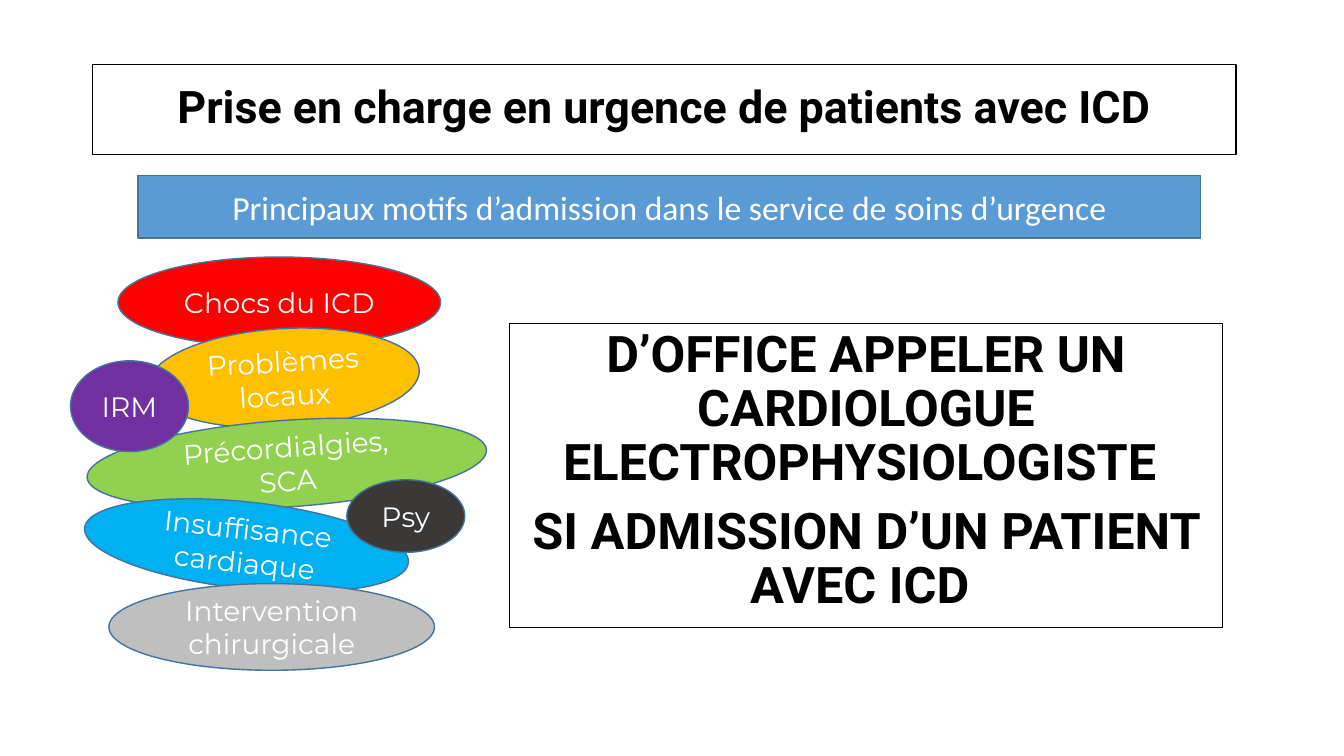
import pptx
import pptx.util
import pptx.dml.color
import pptx.enum.shapes
import pptx.enum.text

Inches = pptx.util.Inches
Pt = pptx.util.Pt
RGBColor = pptx.dml.color.RGBColor
Shape = pptx.enum.shapes.MSO_SHAPE
Anchor = pptx.enum.text.MSO_ANCHOR

BLACK = RGBColor(0x00, 0x00, 0x00)
WHITE = RGBColor(0xFF, 0xFF, 0xFF)
BLUE = RGBColor(0x5B, 0x9B, 0xD5)
EDGE = RGBColor(0x43, 0x73, 0x9E)
RED = RGBColor(0xFF, 0x00, 0x00)
AMBER = RGBColor(0xFF, 0xC0, 0x00)
GREEN = RGBColor(0x92, 0xD0, 0x50)
CYAN = RGBColor(0x00, 0xB0, 0xF0)
SILVER = RGBColor(0xBF, 0xBF, 0xBF)
PURPLE = RGBColor(0x70, 0x30, 0xA0)
DARK = RGBColor(0x3B, 0x38, 0x38)

# label, left, top, width, height, rotation, fill; from back to front
CAUSES = [
    ("Chocs du ICD", 1.17, 2.55, 3.2, 0.9, 0, RED),
    ("Problèmes locaux", 1.47, 3.26, 2.69, 0.98, -3.4, AMBER),
    ("Précordialgies, SCA", 0.86, 4.17, 3.97, 0.86, -4, GREEN),
    ("Insuffisance cardiaque", 0.83, 4.98, 3.23, 0.86, 6.2, CYAN),
    ("Intervention chirurgicale", 1.08, 5.79, 3.23, 0.86, 0, SILVER),
    ("IRM", 0.7, 3.58, 1.17, 0.9, 0, PURPLE),
    ("Psy", 3.44, 4.76, 1.17, 0.72, 0, DARK),
]


class Deck:
    head = "Roboto"
    body = "Calibri"
    label = "Montserrat"

    def __init__(self):
        self.prs = pptx.Presentation()
        self.prs.slide_width = Inches(13.33)
        self.prs.slide_height = Inches(7.5)
        self.slide = self.prs.slides.add_slide(self.prs.slide_layouts[5])

    def set_text(self, shape, lines, font, size, color, bold=False,
                 anchor=Anchor.MIDDLE, space=1.0, before=0):
        """Fill a shape with centred paragraphs in one style."""
        frame = shape.text_frame
        frame.text = "\n".join(lines)
        frame.word_wrap = True
        frame.auto_size = pptx.enum.text.MSO_AUTO_SIZE.NONE
        frame.vertical_anchor = anchor
        for para in frame.paragraphs:
            para.alignment = pptx.enum.text.PP_ALIGN.CENTER
            para.line_spacing = space
            para.space_before = Pt(before)
            for run in para.runs:
                run.font.name = font
                run.font.size = Pt(size)
                run.font.bold = bold
                run.font.color.rgb = color

    def border(self, shape, color, width):
        shape.line.color.rgb = color
        shape.line.width = Pt(width)

    def title(self, text, left, top, width, height):
        shape = self.slide.shapes.title
        shape.left, shape.top = Inches(left), Inches(top)
        shape.width, shape.height = Inches(width), Inches(height)
        self.border(shape, BLACK, 1)
        self.set_text(shape, [text], self.head, 32, BLACK, bold=True,
                      space=0.9)

    def notice(self, lines, left, top, width, height):
        box = self.slide.shapes.add_textbox(
            Inches(left), Inches(top), Inches(width), Inches(height))
        self.border(box, BLACK, 0.75)
        self.set_text(box, lines, self.head, 36, BLACK, bold=True,
                      anchor=Anchor.TOP, space=0.9, before=10)

    def panel(self, kind, text, left, top, width, height, fill, font, size):
        shape = self.slide.shapes.add_shape(
            kind, Inches(left), Inches(top), Inches(width), Inches(height))
        shape.shadow.inherit = False
        shape.fill.solid()
        shape.fill.fore_color.rgb = fill
        self.border(shape, EDGE, 1)
        self.set_text(shape, [text], font, size, WHITE)
        return shape

    def banner(self, text, left, top, width, height):
        self.panel(Shape.RECTANGLE, text, left, top, width, height,
                   BLUE, self.body, 24)

    def cause(self, text, left, top, width, height, turn, fill):
        oval = self.panel(Shape.OVAL, text, left, top, width, height,
                          fill, self.label, 20)
        oval.rotation = turn


def main():
    deck = Deck()
    deck.title("Prise en charge en urgence de patients avec ICD",
               0.92, 0.64, 11.34, 0.89)
    deck.notice(["D’OFFICE APPELER UN CARDIOLOGUE ELECTROPHYSIOLOGISTE ",
                 "SI ADMISSION D’UN PATIENT AVEC ICD "],
                5.05, 3.21, 7.08, 3.02)
    deck.banner("Principaux motifs d’admission dans le service de soins d’urgence",
                1.37, 1.74, 10.54, 0.62)
    for cause in CAUSES:
        deck.cause(*cause)
    deck.prs.save("out.pptx")


if __name__ == "__main__":
    main()
